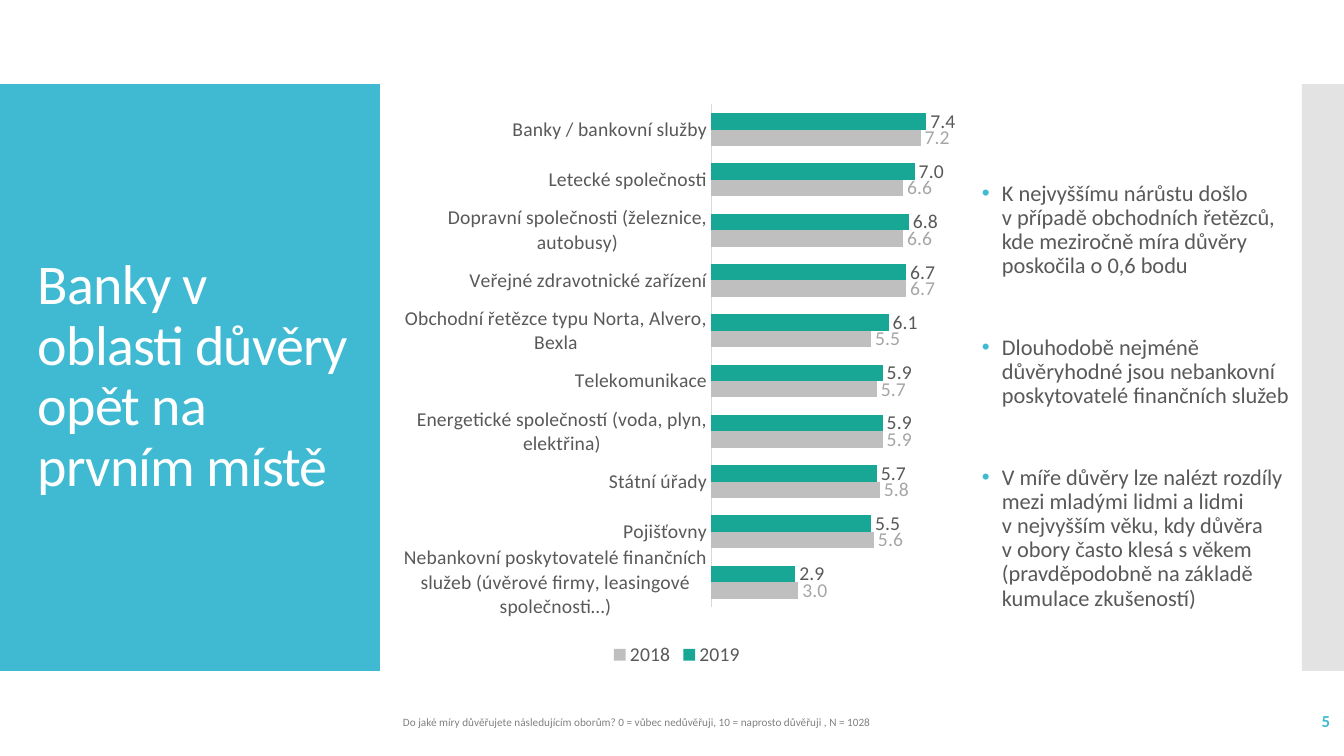
import copy

import lxml.etree
import pptx
import pptx.chart.data
import pptx.dml.color
import pptx.enum.chart
import pptx.enum.shapes
import pptx.enum.text
import pptx.oxml
import pptx.oxml.ns
import pptx.util

EMU_PER_PX = 914400 / 100.8
FONT = "Calibri"
COLORS = {
    "panel": "40BAD2", "strip": "C8C8C8", "white": "FFFFFF", "text": "595959",
    "note": "808080", "axis": "D9D9D9", "2019": "18A794", "2018": "BFBFBF",
    "label_2019": "595959", "label_2018": "A6A6A6",
}
TITLE = "Banky v oblasti důvěry opět na prvním místě"
FINDINGS = [
    "K nejvyššímu nárůstu došlo\nv případě obchodních řetězců, kde meziročně míra důvěry "
    "poskočila o 0,6 bodu",
    "Dlouhodobě nejméně důvěryhodné jsou nebankovní poskytovatelé finančních služeb",
    "V míře důvěry lze nalézt rozdíly mezi mladými lidmi a lidmi\nv nejvyšším věku, "
    "kdy důvěra\nv obory často klesá s věkem (pravděpodobně na základě kumulace zkušeností)",
]
QUESTION = ("Do jaké míry důvěřujete následujícím oborům? 0 = vůbec nedůvěřuji, "
            "10 = naprosto důvěřuji , N = 1028")
TRUST = [
    ("Banky / bankovní služby", 7.4, 7.2),
    ("Letecké společnosti", 7.0, 6.6),
    ("Dopravní společnosti (železnice, autobusy)", 6.8, 6.6),
    ("Veřejné zdravotnické zařízení", 6.7, 6.7),
    ("Obchodní řetězce typu Norta, Alvero, Bexla", 6.1, 5.5),
    ("Telekomunikace", 5.9, 5.7),
    ("Energetické společností (voda, plyn, elektřina)", 5.9, 5.9),
    ("Státní úřady", 5.7, 5.8),
    ("Pojišťovny", 5.5, 5.6),
    ("Nebankovní poskytovatelé finančních služeb (úvěrové firmy, leasingové společnosti…)",
     2.9, 3.0),
]


def px(length):
    return pptx.util.Emu(round(length * EMU_PER_PX))


def rgb(name):
    return pptx.dml.color.RGBColor.from_string(COLORS[name])


def set_all(target, values):
    for name, value in values.items():
        setattr(target, name, value)


def style_font(font, size, color, bold=False):
    set_all(font, {"name": FONT, "size": pptx.util.Pt(size), "bold": bold})
    font.color.rgb = rgb(color)


def add_rectangle(slide, box, color):
    shape = slide.shapes.add_shape(pptx.enum.shapes.MSO_SHAPE.RECTANGLE, *map(px, box))
    shape.shadow.inherit = False
    shape.fill.solid()
    shape.fill.fore_color.rgb = rgb(color)
    shape.line.fill.background()
    return shape


def add_text(slide, box, texts, size, color, bold=False, **paragraph_format):
    """Add a vertically centred text box with one paragraph per text."""
    frame = slide.shapes.add_textbox(*map(px, box)).text_frame
    set_all(frame, {"word_wrap": True,
                    "vertical_anchor": pptx.enum.text.MSO_ANCHOR.MIDDLE})
    for index, text in enumerate(texts):
        paragraph = frame.add_paragraph() if index else frame.paragraphs[0]
        paragraph.text = text
        set_all(paragraph, paragraph_format)
        for run in paragraph.runs:
            style_font(run.font, size, color, bold)
        for line_break in paragraph._p.findall(pptx.oxml.ns.qn("a:br")):
            line_break.append(copy.deepcopy(paragraph.runs[0]._r.rPr))
    return frame


def add_title_panel(slide, box):
    left, top, width, height = box
    add_rectangle(slide, box, "panel")
    frame = add_text(slide, (left + 28, top + 40, width - 35, height - 80), [TITLE],
                     40, "white", line_spacing=0.9)
    frame.paragraphs[0].runs[0]._r.rPr.set("spc", "-60")


def add_side_strip(slide, box):
    strip = add_rectangle(slide, box, "strip")
    color = strip._element.spPr.find(".//" + pptx.oxml.ns.qn("a:srgbClr"))
    lxml.etree.SubElement(color, pptx.oxml.ns.qn("a:alpha"), val="50000")


def add_findings(slide, box):
    frame = add_text(slide, box, FINDINGS, 16, "text", line_spacing=0.9)
    for index, paragraph in enumerate(frame.paragraphs):
        if index:
            paragraph.space_before = pptx.util.Pt(41)
        properties = paragraph._p.get_or_add_pPr()
        properties.set("marL", str(px(20)))
        properties.set("indent", str(-px(20)))
        bullet_color = lxml.etree.SubElement(properties, pptx.oxml.ns.qn("a:buClr"))
        lxml.etree.SubElement(bullet_color, pptx.oxml.ns.qn("a:srgbClr"),
                              val=COLORS["panel"])
        lxml.etree.SubElement(properties, pptx.oxml.ns.qn("a:buFont"), typeface="Arial")
        lxml.etree.SubElement(properties, pptx.oxml.ns.qn("a:buChar"), char="•")


def set_plot_layout(chart, **fractions):
    """Fix the inner plot area as fractions of the chart."""
    plot_area = chart._chartSpace.chart.plotArea
    for old in plot_area.findall(pptx.oxml.ns.qn("c:layout")):
        plot_area.remove(old)
    layout = lxml.etree.Element(pptx.oxml.ns.qn("c:layout"))
    manual = lxml.etree.SubElement(layout, pptx.oxml.ns.qn("c:manualLayout"))
    values = {"layoutTarget": "inner", "xMode": "edge", "yMode": "edge", **fractions}
    for name, value in values.items():
        lxml.etree.SubElement(manual, pptx.oxml.ns.qn("c:" + name), val=str(value))
    plot_area.insert(0, layout)


def add_trust_chart(slide, box):
    categories, values_2019, values_2018 = zip(*TRUST)
    data = pptx.chart.data.CategoryChartData(number_format="0.0")
    data.categories = categories
    data.add_series("2019", values_2019)
    data.add_series("2018", values_2018)
    chart = slide.shapes.add_chart(pptx.enum.chart.XL_CHART_TYPE.BAR_CLUSTERED,
                                   *map(px, box), data).chart
    set_all(chart, {"has_title": False, "has_legend": True})
    style_font(chart.font, 14, "text")
    set_all(chart.legend, {"position": pptx.enum.chart.XL_LEGEND_POSITION.BOTTOM,
                           "include_in_layout": False})
    style_font(chart.legend.font, 14, "text")

    no_tick = pptx.enum.chart.XL_TICK_MARK.NONE
    set_all(chart.category_axis, {"reverse_order": True, "major_tick_mark": no_tick,
                                  "minor_tick_mark": no_tick})
    style_font(chart.category_axis.tick_labels.font, 14, "text")
    axis_line = chart.category_axis.format.line
    axis_line.color.rgb = rgb("axis")
    axis_line.width = pptx.util.Pt(0.75)
    set_all(chart.value_axis, {"visible": False, "has_major_gridlines": False,
                               "minimum_scale": 0, "maximum_scale": 8})

    plot = chart.plots[0]
    set_all(plot, {"gap_width": 105, "overlap": 0, "vary_by_categories": False})
    for series in plot.series:
        series.format.fill.solid()
        series.format.fill.fore_color.rgb = rgb(series.name)
        labels = series.data_labels
        set_all(labels, {"show_value": True, "number_format": "0.0",
                         "number_format_is_linked": False,
                         "position": pptx.enum.chart.XL_LABEL_POSITION.OUTSIDE_END})
        style_font(labels.font, 14, "label_" + series.name)
    set_plot_layout(chart, x=0.56, y=0.02, w=0.41, h=0.87)


def add_footer(slide, box):
    left, top, width, height = box
    add_text(slide, (left, top + 5, 909, height - 6), [QUESTION], 8, "note",
             line_spacing=0.9)
    add_text(slide, (left + width - 168, top, 168, height), ["5"], 12, "panel", bold=True,
             alignment=pptx.enum.text.PP_ALIGN.RIGHT)


def main():
    presentation = pptx.Presentation()
    set_all(presentation, {"slide_width": px(1344), "slide_height": px(756)})
    slide = presentation.slides.add_slide(presentation.slide_layouts[6])
    add_title_panel(slide, (0, 84, 380, 587))
    add_side_strip(slide, (1302, 84, 42, 587))
    add_findings(slide, (972, 162, 330, 469))
    add_footer(slide, (393, 701, 947, 40))
    add_trust_chart(slide, (393, 93, 568, 578))
    presentation.save("out.pptx")


if __name__ == "__main__":
    main()
